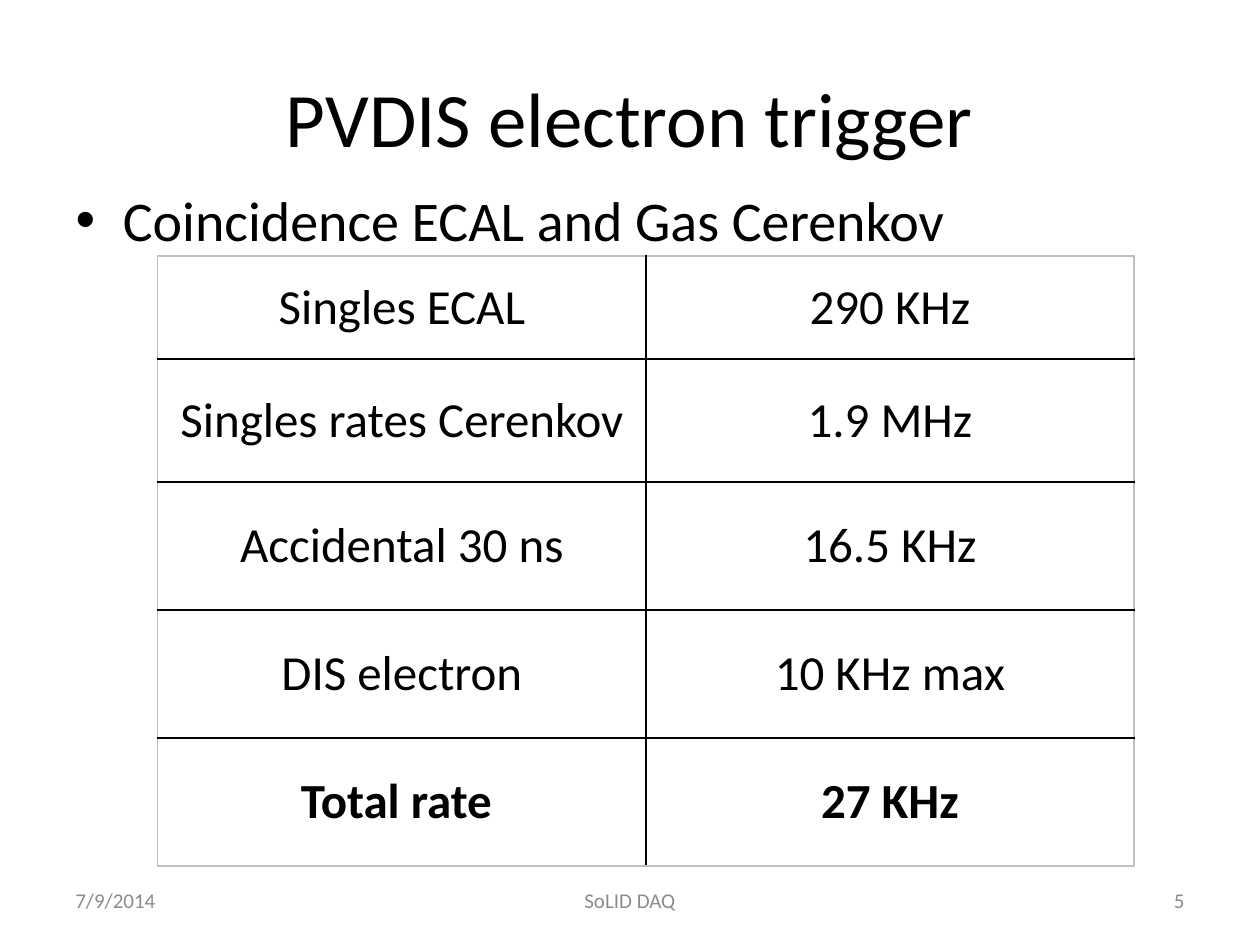
from dataclasses import dataclass
from lxml import etree
from pptx import Presentation, util as u
from pptx.dml.color import RGBColor
from pptx.enum import text
from pptx.oxml import ns

# Content
TITLE = "PVDIS electron trigger"
BULLET = "Coincidence ECAL and Gas Cerenkov"
RATES = [
    ("Singles ECAL", "290 KHz"),
    ("Singles rates Cerenkov", "1.9 MHz"),
    ("Accidental 30 ns", "16.5 KHz"),
    ("DIS electron", "10 KHz max"),
    ("Total rate ", "27 KHz"),
]
ROW_HEIGHTS = [2.08, 2.48, 2.58, 2.58, 2.58]
COLUMN_WIDTH = 9.84
FOOTERS = [  # text, left, width, alignment
    ("7/9/2014", 1.27, 5.93, text.PP_ALIGN.LEFT),
    ("SoLID DAQ", 8.68, 8.04, text.PP_ALIGN.CENTER),
    ("5", 18.2, 5.93, text.PP_ALIGN.RIGHT),
]


@dataclass(frozen=True)
class Theme:
    font: str = "Calibri"
    ink: str = "000000"
    muted: str = "8C8C8C"
    frame: str = "BFBFBF"
    title: int = 44
    body: int = 32
    cell: int = 28
    footer: int = 12


theme = Theme()


def place(shape, left, top, width, height):
    shape.left, shape.top = u.Cm(left), u.Cm(top)
    shape.width, shape.height = u.Cm(width), u.Cm(height)


def write(frame, words, size, color=theme.ink, align=None, bold=None):
    paragraph = frame.paragraphs[0]
    paragraph.alignment = align
    run = paragraph.add_run()
    run.text = words
    run.font.name, run.font.size, run.font.bold = theme.font, u.Pt(size), bold
    run.font.color.rgb = RGBColor.from_string(color)


def set_borders(cell, colors):
    properties = cell._tc.get_or_add_tcPr()
    for index, (side, color) in enumerate(colors.items()):
        line = etree.Element(ns.qn(f"a:{side}"), w=str(u.Pt(1)))
        fill = etree.SubElement(line, ns.qn("a:solidFill"))
        etree.SubElement(fill, ns.qn("a:srgbClr"), val=color)
        properties.insert(index, line)


presentation = Presentation()
presentation.slide_width, presentation.slide_height = u.Cm(25.4), u.Cm(19.05)
slide = presentation.slides.add_slide(presentation.slide_layouts[1])

# Title and bullet
title, body = slide.placeholders
place(title, 1.27, 0.76, 22.86, 3.18)
title.text_frame.vertical_anchor = text.MSO_ANCHOR.MIDDLE
write(title.text_frame, TITLE, theme.title, align=text.PP_ALIGN.CENTER)
place(body, 1.27, 3.61, 22.86, 12.57)
write(body.text_frame, BULLET, theme.body)

# Footer line
for words, left, width, align in FOOTERS:
    box = slide.shapes.add_textbox(u.Cm(left), u.Cm(17.65), u.Cm(width), u.Cm(1.01))
    box.text_frame.word_wrap = True
    box.text_frame.vertical_anchor = text.MSO_ANCHOR.MIDDLE
    write(box.text_frame, words, theme.footer, theme.muted, align)

# Rate table
last_row, last_column = len(RATES) - 1, len(RATES[0]) - 1
table = slide.shapes.add_table(
    len(RATES), len(RATES[0]), u.Cm(3.18), u.Cm(5.16),
    u.Cm(COLUMN_WIDTH * len(RATES[0])), u.Cm(sum(ROW_HEIGHTS))).table
table.first_row = table.horz_banding = False
for column in table.columns:
    column.width = u.Cm(COLUMN_WIDTH)
for r, (rate, height) in enumerate(zip(RATES, ROW_HEIGHTS)):
    table.rows[r].height = u.Cm(height)
    for c, words in enumerate(rate):
        cell = table.cell(r, c)
        cell.fill.background()
        cell.vertical_anchor = text.MSO_ANCHOR.MIDDLE
        write(cell.text_frame, words, theme.cell, align=text.PP_ALIGN.CENTER,
              bold=r == last_row)
        outer = {"lnL": c == 0, "lnR": c == last_column,
                 "lnT": r == 0, "lnB": r == last_row}
        set_borders(cell, {side: theme.frame if edge else theme.ink
                           for side, edge in outer.items()})

presentation.save("out.pptx")
